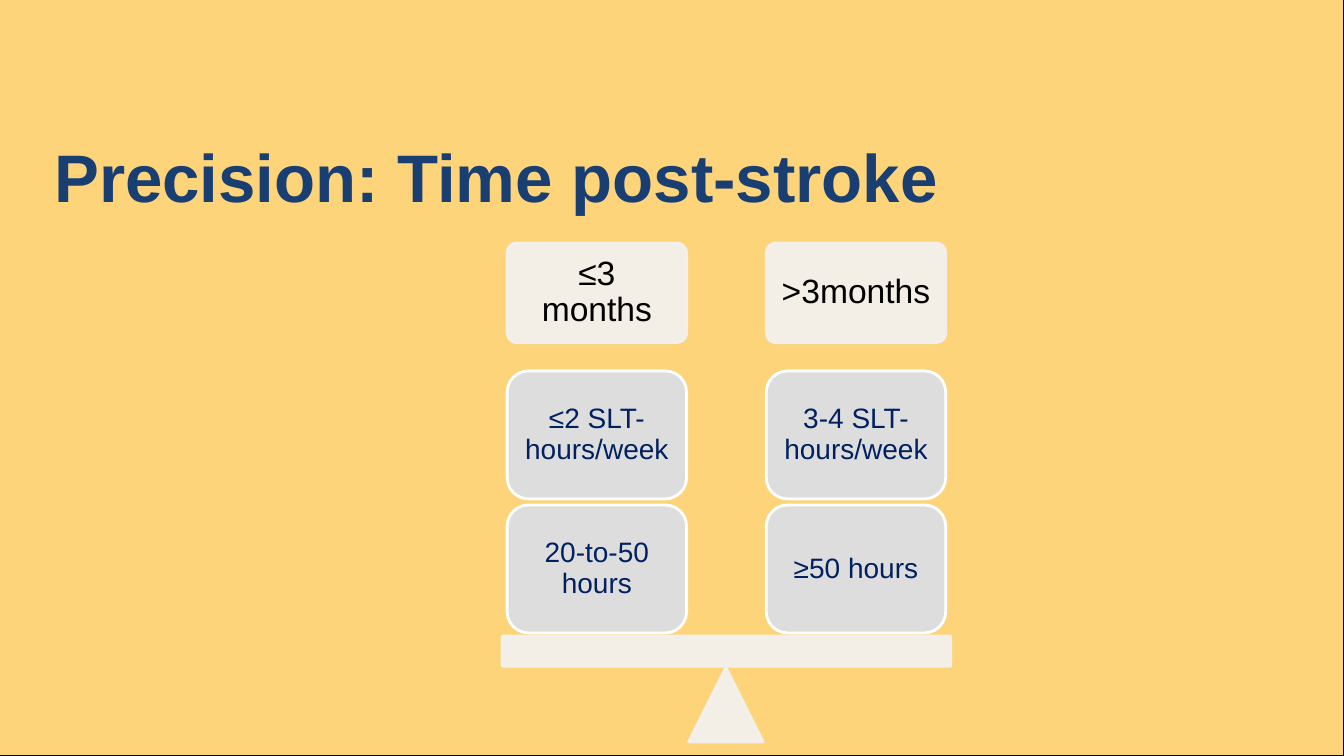
from lxml import etree
from pptx import Presentation
from pptx.dml.color import RGBColor
from pptx.enum.shapes import MSO_SHAPE
from pptx.enum.text import MSO_ANCHOR, PP_ALIGN
from pptx.oxml.ns import qn
from pptx.util import Inches, Pt

YELLOW = RGBColor(0xFE, 0xD4, 0x7A)
BLACK = RGBColor(0, 0, 0)
TITLE_BLUE = RGBColor(0x19, 0x3E, 0x72)
NAVY = RGBColor(0x00, 0x20, 0x60)
PALE = RGBColor(0xF2, 0xF2, 0xF2)
GREY = RGBColor(0xDD, 0xDD, 0xDD)
WHITE = RGBColor(0xFF, 0xFF, 0xFF)

prs = Presentation()
prs.slide_width = Inches(13.33)
prs.slide_height = Inches(7.5)
slide = prs.slides.add_slide(prs.slide_layouts[6])


def add_block(preset, left, top, width, height, fill, line, line_width=2, opacity=100):
    block = slide.shapes.add_shape(
        preset, Inches(left), Inches(top), Inches(width), Inches(height))
    block.shadow.inherit = False
    block.fill.solid()
    block.fill.fore_color.rgb = fill
    block.line.color.rgb = line
    block.line.width = Pt(line_width)
    if opacity < 100:
        for color in block._element.spPr.iter(qn("a:srgbClr")):
            etree.SubElement(color, qn("a:alpha"), val=str(opacity * 1000))
    return block


def write_text(block, text, size, color, inset):
    frame = block.text_frame
    frame.word_wrap = True
    frame.vertical_anchor = MSO_ANCHOR.MIDDLE
    frame.margin_left = frame.margin_right = Inches(inset)
    frame.margin_top = frame.margin_bottom = Inches(inset)
    paragraph = frame.paragraphs[0]
    paragraph.text = text
    paragraph.alignment = PP_ALIGN.CENTER
    paragraph.line_spacing = 0.9
    paragraph.font.name = "Arial"
    paragraph.font.size = Pt(size)
    paragraph.font.color.rgb = color
    return paragraph


add_block(MSO_SHAPE.RECTANGLE, 0, -0.01, 13.33, 7.51, YELLOW, BLACK, 0.75)

title = slide.shapes.add_textbox(Inches(0.44), Inches(1.07), Inches(10.02), Inches(1.45))
heading = write_text(title, "Precision: Time post-stroke", 48, TITLE_BLUE, 0.1)
heading.alignment = PP_ALIGN.LEFT
heading.font.bold = True
title.text_frame.margin_top = title.text_frame.margin_bottom = Inches(0.05)

add_block(MSO_SHAPE.ISOSCELES_TRIANGLE, 6.83, 6.62, 0.74, 0.74, PALE, PALE, opacity=90)
add_block(MSO_SHAPE.RECTANGLE, 4.98, 6.31, 4.45, 0.3, PALE, PALE, opacity=90)

sides = [
    (5.03, "≤3 months", ["≤2 SLT-hours/week", "20-to-50 hours"]),
    (7.6, ">3months", ["3-4 SLT-hours/week", "≥50 hours"]),
]
for left, period, doses in sides:
    period_box = add_block(
        MSO_SHAPE.ROUNDED_RECTANGLE, left, 2.41, 1.78, 0.99, PALE, PALE, opacity=90)
    period_box.adjustments[0] = 0.1
    write_text(period_box, period, 24, BLACK, 0.1)
    for row, dose in enumerate(doses):
        weight = add_block(
            MSO_SHAPE.ROUNDED_RECTANGLE, left, 3.68 + 1.33 * row, 1.78, 1.27, GREY, WHITE)
        write_text(weight, dose, 20, NAVY, 0.08)

prs.save("out.pptx")
